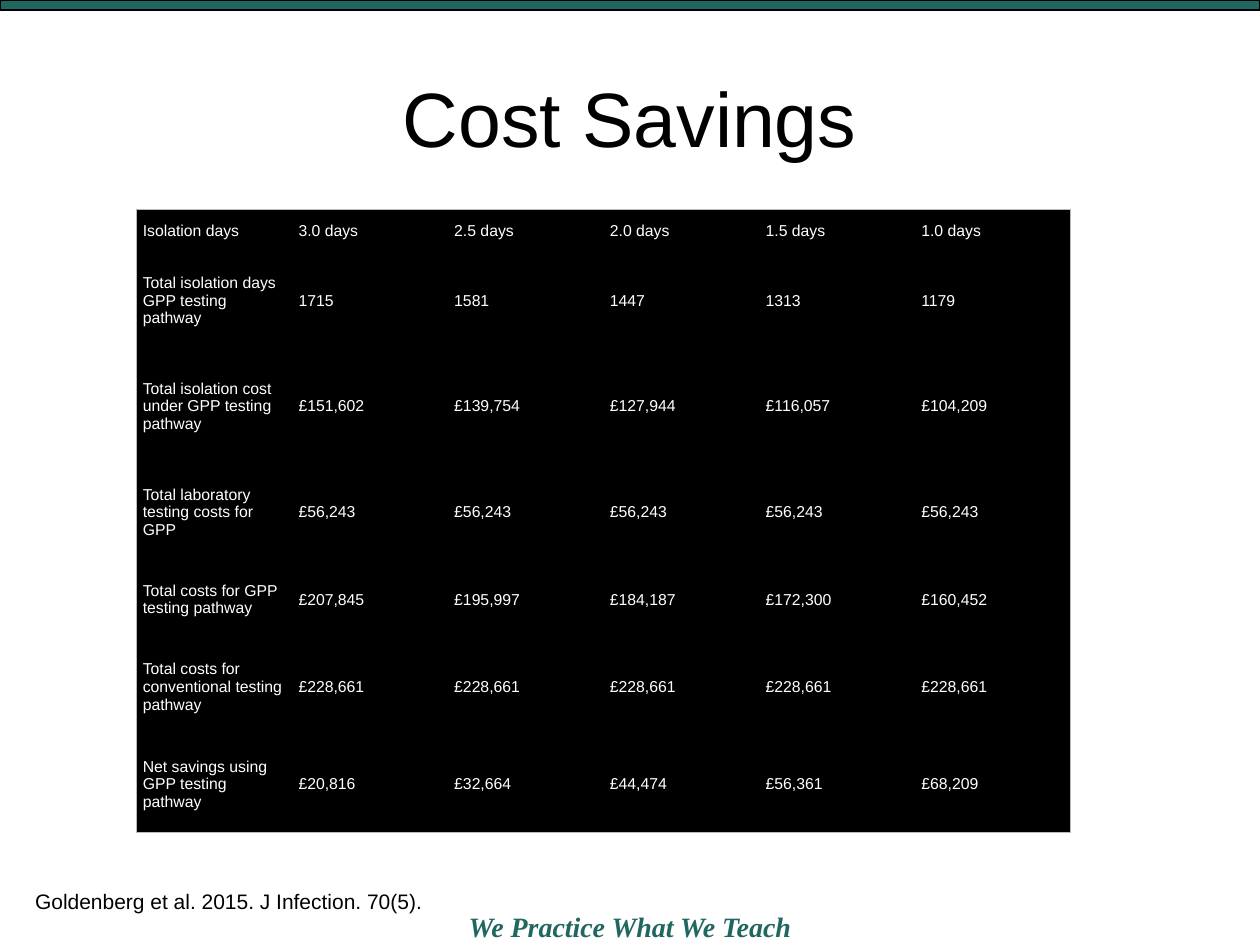
import lxml.etree
import pptx
import pptx.dml.color
import pptx.enum.shapes
import pptx.enum.text
import pptx.oxml
import pptx.oxml.ns
import pptx.util

Pt = pptx.util.Pt
ALIGN = pptx.enum.text.PP_ALIGN
MIDDLE = pptx.enum.text.MSO_ANCHOR.MIDDLE
TEAL, BLACK, WHITE, GREY = "216761", "000000", "FFFFFF", "B9B9B9"
PLAIN_TABLE_STYLE = "{2D5ABB26-0587-4C30-8999-92F81FD0307C}"

COLUMN_WIDTH = 89
ROW_HEIGHTS = [24.5, 55.5, 65.5, 55.5, 44.5, 55.5, 55.5]
COSTS = [
    ["Isolation days", "3.0 days", "2.5 days", "2.0 days", "1.5 days", "1.0 days"],
    ["Total isolation days GPP testing pathway", "1715", "1581", "1447", "1313", "1179"],
    ["Total isolation cost under GPP testing pathway",
     "£151,602", "£139,754", "£127,944", "£116,057", "£104,209"],
    ["Total laboratory testing costs for GPP"] + ["£56,243"] * 5,
    ["Total costs for GPP testing pathway",
     "£207,845", "£195,997", "£184,187", "£172,300", "£160,452"],
    ["Total costs for conventional testing pathway"] + ["£228,661"] * 5,
    ["Net savings using GPP testing pathway",
     "£20,816", "£32,664", "£44,474", "£56,361", "£68,209"],
]


def colour(value):
    """Turn a hex string into a colour."""
    return pptx.dml.color.RGBColor.from_string(value)


def apply_format(target, values):
    """Set each named attribute on the target."""
    for name, value in values.items():
        setattr(target, name, value)


def write_text(frame, text, size, hex_colour, align=ALIGN.CENTER, **font_format):
    """Write one formatted paragraph into a text frame."""
    para = frame.paragraphs[0]
    para.alignment = align
    span = para.add_run()
    span.text = text
    apply_format(span.font, {"name": "Arial", "size": Pt(size), **font_format})
    span.font.color.rgb = colour(hex_colour)


def add_label(page, bounds, text, size, hex_colour, wrap=True, **font_format):
    """Add a centred text box."""
    box = page.shapes.add_textbox(*map(Pt, bounds))
    box.text_frame.word_wrap = wrap
    write_text(box.text_frame, text, size, hex_colour, **font_format)


def add_top_bar(page, width):
    """Add the band along the top edge."""
    bar = page.shapes.add_shape(
        pptx.enum.shapes.MSO_SHAPE.RECTANGLE, Pt(0), Pt(0), width, Pt(5.75))
    bar.shadow.inherit = False
    bar.fill.solid()
    bar.fill.fore_color.rgb = colour(TEAL)
    bar.line.color.rgb = colour(BLACK)
    bar.line.width = Pt(0.75)


def set_title(page, text):
    """Place and fill the title placeholder."""
    title = page.shapes.title
    apply_format(title, {"left": Pt(36), "top": Pt(21.6),
                         "width": Pt(648), "height": Pt(90)})
    title.text_frame.vertical_anchor = MIDDLE
    write_text(title.text_frame, text, 44, BLACK)


def add_border(cell, side):
    """Draw a thin grey line on one side of a cell."""
    properties = cell._tc.get_or_add_tcPr()
    line = lxml.etree.SubElement(
        properties, pptx.oxml.ns.qn(f"a:ln{side}"), w=str(Pt(0.75)))
    fill = lxml.etree.SubElement(line, pptx.oxml.ns.qn("a:solidFill"))
    lxml.etree.SubElement(fill, pptx.oxml.ns.qn("a:srgbClr"), val=GREY)


def fill_cell(cell, text, sides):
    """Format a cell with its text and outer borders."""
    apply_format(cell, {"margin_left": Pt(3.6), "margin_right": Pt(3.6),
                        "margin_top": Pt(1.5), "margin_bottom": Pt(1.5),
                        "vertical_anchor": MIDDLE})
    for side in sides:
        add_border(cell, side)
    cell.fill.solid()
    cell.fill.fore_color.rgb = colour(BLACK)
    write_text(cell.text_frame, text, 9, WHITE, ALIGN.LEFT)


def add_cost_table(page):
    """Add the table of costs with a frame around its outside."""
    row_count, column_count = len(COSTS), len(COSTS[0])
    table = page.shapes.add_table(
        row_count, column_count, Pt(78), Pt(119.5),
        Pt(COLUMN_WIDTH * column_count), Pt(sum(ROW_HEIGHTS))).table
    table._tbl.tblPr.find(pptx.oxml.ns.qn("a:tableStyleId")).text = PLAIN_TABLE_STYLE
    table.horz_banding = False
    for column in table.columns:
        column.width = Pt(COLUMN_WIDTH)
    for r, (height, texts) in enumerate(zip(ROW_HEIGHTS, COSTS)):
        table.rows[r].height = Pt(height)
        for c, text in enumerate(texts):
            edges = {"L": c == 0, "R": c == column_count - 1,
                     "T": r == 0, "B": r == row_count - 1}
            fill_cell(table.cell(r, c), text, [side for side in edges if edges[side]])


def main():
    """Build the cost savings slide."""
    deck = pptx.Presentation()
    apply_format(deck, {"slide_width": Pt(720), "slide_height": Pt(540)})
    page = deck.slides.add_slide(deck.slide_layouts[5])
    add_label(page, (0, 516.25, 720, 26.65), "We Practice What We Teach", 16, TEAL,
              name="Times New Roman", bold=True, italic=True)
    add_top_bar(page, deck.slide_width)
    set_title(page, "Cost Savings")
    add_cost_table(page)
    add_label(page, (12, 504, 237.6, 21.6),
              "Goldenberg et al. 2015. J Infection. 70(5).", 12, BLACK, wrap=False)
    deck.save("out.pptx")


if __name__ == "__main__":
    main()
